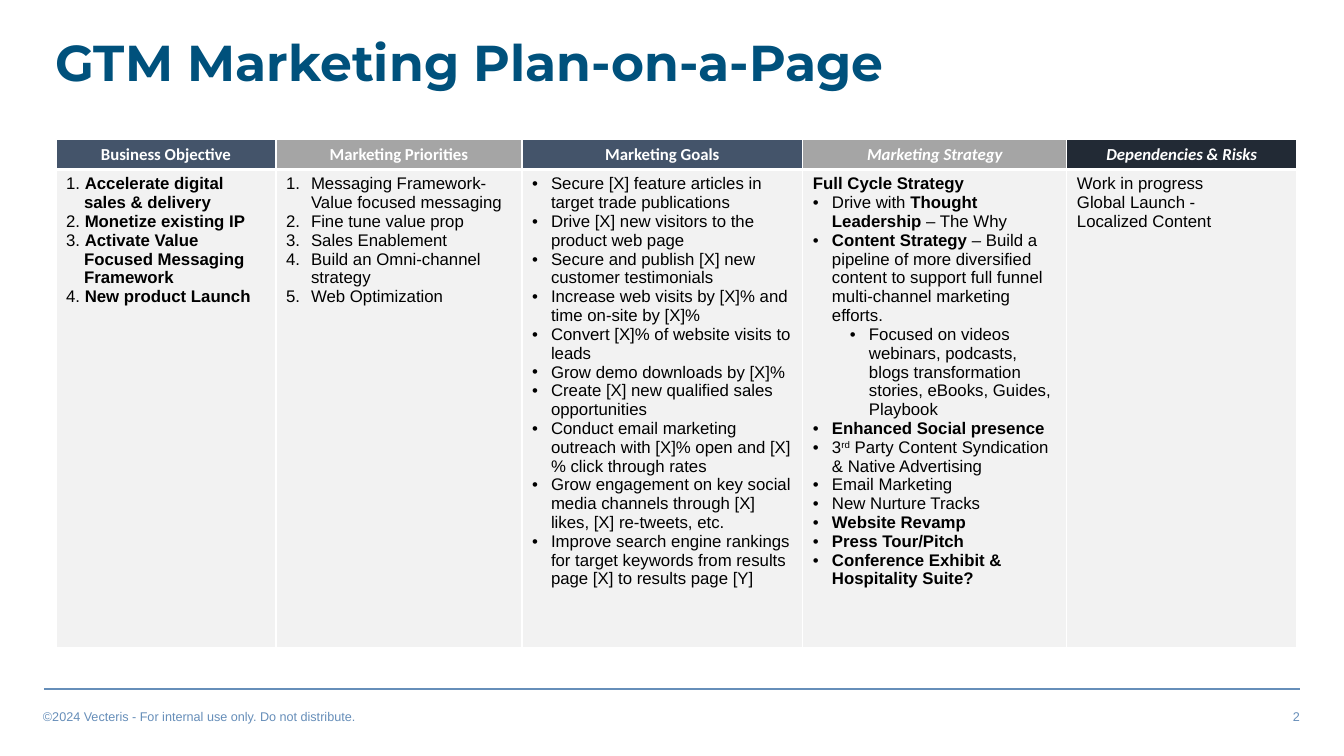
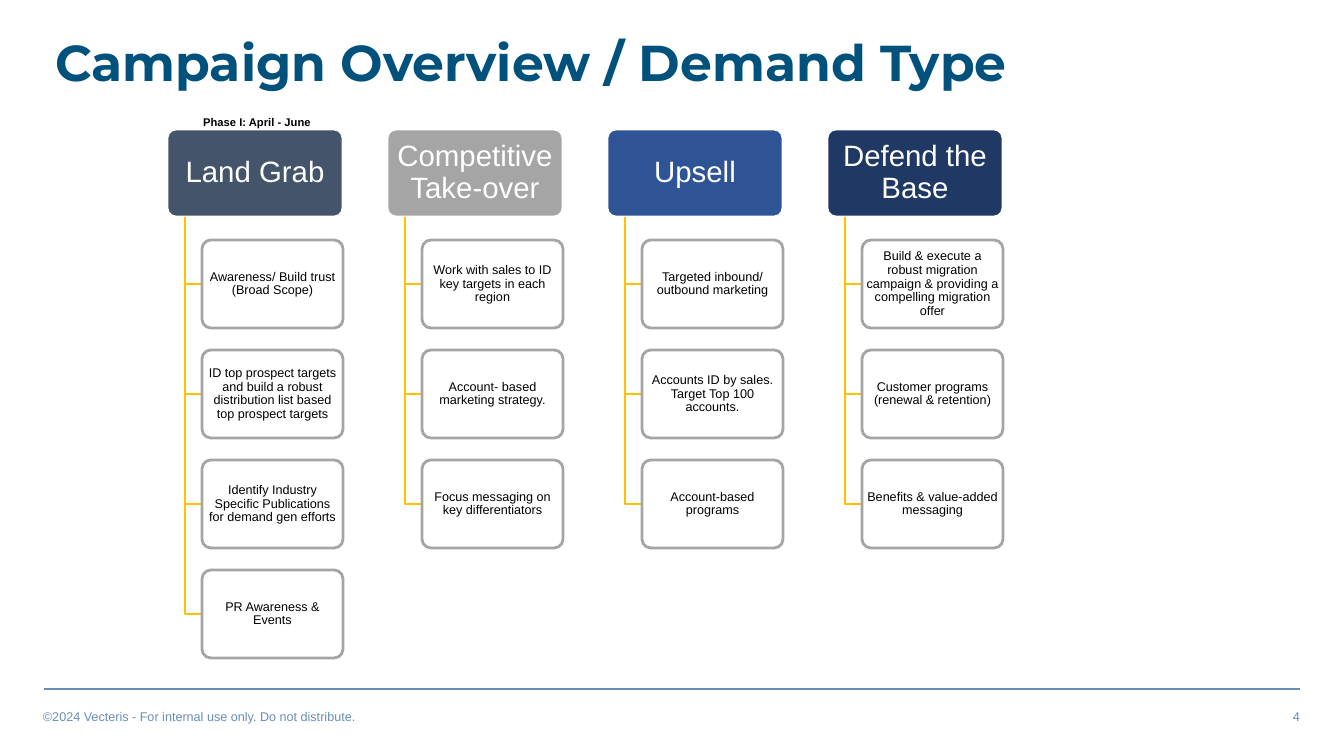
from dataclasses import dataclass

from lxml.etree import SubElement
from pptx import Presentation
from pptx.dml.color import RGBColor
from pptx.enum.shapes import MSO_CONNECTOR, MSO_SHAPE
from pptx.enum.text import MSO_ANCHOR, MSO_AUTO_SIZE, PP_ALIGN
from pptx.oxml import parse_xml
from pptx.oxml.ns import nsdecls, qn
from pptx.util import Pt

PAGE_WIDTH, PAGE_HEIGHT = 1344, 756
EMU_PER_PX = 12192000 / PAGE_WIDTH


@dataclass(frozen=True)
class Theme:
    title: str = "00517C"
    footer: str = "668EB9"
    slate: str = "44546A"
    gray: str = "A5A5A5"
    ink: str = "222A35"
    blue: str = "2F5496"
    navy: str = "1F3864"
    gold: str = "FFC000"
    panel: str = "F2F2F2"
    white: str = "FFFFFF"
    black: str = "000000"
    title_font: str = "Montserrat"
    header_font: str = "Calibri"
    body_font: str = "Arial"
    title_size: int = 36
    campaign_size: int = 21
    table_size: int = 12
    small_size: int = 9
    phase_size: int = 8


THEME = Theme()
FOOTER = "©2024 Vecteris - For internal use only. Do not distribute."

BOLD = {"bold": True}
SUPERSCRIPT = {"baseline": 30000}
PLAIN = {}
TYPED_NUMBER = {"margin": 18, "hanging": 18}
NUMBER = {"margin": 25, "hanging": 25, "marker": "1."}
BULLET = {"margin": 19, "hanging": 19, "marker": "•"}
SUB_BULLET = {"margin": 56, "hanging": 19, "marker": "•", "level": 1}

OBJECTIVES = [
    "Accelerate digital sales & delivery",
    "Monetize existing IP",
    "Activate Value Focused Messaging Framework",
    "New product Launch",
]
PRIORITIES = [
    "Messaging Framework- Value focused messaging",
    "Fine tune value prop",
    "Sales Enablement",
    "Build an Omni-channel strategy",
    "Web Optimization",
]
GOALS = [
    "Secure [X] feature articles in target trade publications",
    "Drive [X] new visitors to the product web page",
    "Secure and publish [X] new customer testimonials",
    "Increase web visits by [X]% and time on-site by [X]%",
    "Convert [X]% of website visits to leads",
    "Grow demo downloads by [X]%",
    "Create [X] new qualified sales opportunities",
    "Conduct email marketing outreach with [X]% open and [X]% click through rates",
    "Grow engagement on key social media channels through [X] likes, [X] re-tweets, etc.",
    "Improve search engine rankings for target keywords from results page [X] to results page [Y]",
]
STRATEGY = [
    ([("Full Cycle Strategy", BOLD)], PLAIN),
    ([("Drive with ", PLAIN), ("Thought Leadership", BOLD), (" – The Why", PLAIN)], BULLET),
    ([("Content Strategy ", BOLD),
      ("– Build a pipeline of more diversified content to support full funnel "
       "multi-channel marketing efforts.", PLAIN)], BULLET),
    ("Focused on videos webinars, podcasts, blogs transformation stories, "
     "eBooks, Guides, Playbook", SUB_BULLET),
    ([("Enhanced Social presence", BOLD)], BULLET),
    ([("3", PLAIN), ("rd", SUPERSCRIPT),
      (" Party Content Syndication & Native Advertising", PLAIN)], BULLET),
    ("Email Marketing", BULLET),
    ("New Nurture Tracks", BULLET),
    ([("Website Revamp", BOLD)], BULLET),
    ([("Press Tour/Pitch", BOLD)], BULLET),
    ([("Conference Exhibit & Hospitality Suite?", BOLD)], BULLET),
]
RISKS = ["Work in progress", "Global Launch -", "Localized Content"]

# heading, width, heading fill, italic heading, entries as (text, paragraph format)
PLAN = [
    ("Business Objective", 220, THEME.slate, False,
     [([(f"{number}. ", PLAIN), (text, BOLD)], TYPED_NUMBER)
      for number, text in enumerate(OBJECTIVES, 1)]),
    ("Marketing Priorities", 246, THEME.gray, False, [(text, NUMBER) for text in PRIORITIES]),
    ("Marketing Goals", 281, THEME.slate, False, [(text, BULLET) for text in GOALS]),
    ("Marketing Strategy", 264, THEME.gray, True, STRATEGY),
    ("Dependencies & Risks", 230, THEME.ink, True, [(text, PLAIN) for text in RISKS]),
]
PLAN_LEFT, PLAN_TOP = 56, 139
PLAN_ROWS = (30, 478)

PHASE = "Phase I: April - June"
CAMPAIGNS = [
    ("Land Grab", THEME.slate, [
        "Awareness/ Build trust (Broad Scope)",
        "ID top prospect targets and build a robust distribution list based top prospect targets",
        "Identify Industry Specific Publications for demand gen efforts",
        "PR Awareness & Events",
    ]),
    ("Competitive Take-over", THEME.gray, [
        "Work with sales to ID key targets in each region",
        "Account- based marketing strategy.",
        "Focus messaging on key differentiators",
    ]),
    ("Upsell", THEME.blue, [
        "Targeted inbound/\noutbound marketing",
        "Accounts ID by sales. Target Top 100 accounts.",
        "Account-based programs",
    ]),
    ("Defend the Base", THEME.navy, [
        "Build & execute a robust migration campaign & providing a compelling migration offer",
        "Customer programs (renewal & retention)",
        "Benefits & value-added messaging",
    ]),
]
CAMPAIGN_LEFT, CAMPAIGN_TOP, CAMPAIGN_PITCH = 167, 129, 220
CAMPAIGN_WIDTH, BOX_HEIGHT = 176, 88
TACTIC_INDENT, TACTIC_TOP, TACTIC_PITCH, TACTIC_WIDTH = 35, 240, 110, 141
TRUNK_INDENT, TRUNK_TOP = 18, 217


def px(length):
    return round(length * EMU_PER_PX)


def rgb(color):
    return RGBColor.from_string(color)


def add_span(para, text, size, color, font, bold=False, italic=False, baseline=None):
    for index, line in enumerate(text.split("\n")):
        if index:
            para.add_line_break()
        span = para.add_run()
        span.text = line
        span.font.size, span.font.name = Pt(size), font
        span.font.bold, span.font.italic = bold, italic
        span.font.color.rgb = rgb(color)
        if baseline:
            span.font._element.set("baseline", str(baseline))


def set_indent(para, margin, hanging, marker, level):
    properties = para._p.get_or_add_pPr()
    properties.set("marL", str(px(margin)))
    properties.set("indent", str(-px(hanging)))
    para.level = level
    if marker:
        color = SubElement(properties, qn("a:buClr"))
        SubElement(color, qn("a:srgbClr"), val=THEME.black)
        SubElement(properties, qn("a:buFont"), typeface=THEME.body_font)
        if marker == "1.":
            SubElement(properties, qn("a:buAutoNum"), type="arabicPeriod")
        else:
            SubElement(properties, qn("a:buChar"), char=marker)


def write(para, text, size=THEME.small_size, color=THEME.black, font=THEME.body_font,
          bold=False, italic=False, align=PP_ALIGN.LEFT, spacing=None,
          margin=0, hanging=0, marker=None, level=0):
    """Fill a paragraph; text is a string or a list of (text, span format)."""
    para.alignment = align
    if spacing:
        para.line_spacing = spacing
    set_indent(para, margin, hanging, marker, level)
    spans = [(text, PLAIN)] if isinstance(text, str) else text
    for words, style in spans:
        add_span(para, words, **{"size": size, "color": color, "font": font,
                                 "bold": bold, "italic": italic, **style})


def set_frame(frame, anchor=MSO_ANCHOR.MIDDLE, inset=(10, 5)):
    frame.word_wrap = True
    frame.auto_size = MSO_AUTO_SIZE.NONE
    frame.vertical_anchor = anchor
    frame.margin_left = frame.margin_right = px(inset[0])
    frame.margin_top = frame.margin_bottom = px(inset[1])


def add_label(page, text, left, top, width, height, **style):
    box = page.shapes.add_textbox(px(left), px(top), px(width), px(height))
    set_frame(box.text_frame)
    write(box.text_frame.paragraphs[0], text, **style)


def add_page(deck, title, title_width, number):
    """Add a page with the shared title style, footer rule and footer texts."""
    page = deck.slides.add_slide(deck.slide_layouts[5])
    heading = page.shapes.title
    heading.left, heading.top = px(45), px(33)
    heading.width, heading.height = px(title_width), px(77)
    set_frame(heading.text_frame, anchor=MSO_ANCHOR.TOP)
    write(heading.text_frame.paragraphs[0], title, size=THEME.title_size, color=THEME.title,
          font=THEME.title_font, bold=True, spacing=0.9)

    rule = page.shapes.add_connector(MSO_CONNECTOR.STRAIGHT, px(44), px(689), px(1300), px(689))
    rule.line.color.rgb, rule.line.width = rgb(THEME.footer), Pt(1)
    SubElement(rule._element.spPr, qn("a:effectLst"))
    add_label(page, FOOTER, 33, 704, 537, 25, color=THEME.footer)
    add_label(page, str(number), 773, 704, 537, 25, color=THEME.footer, align=PP_ALIGN.RIGHT)
    return page


def style_cell(cell, fill, top, bottom):
    """Set the fill and white borders; top and bottom are widths in points."""
    cell.fill.solid()
    cell.fill.fore_color.rgb = rgb(fill)
    properties = cell._tc.get_or_add_tcPr()
    borders = (("lnL", 1), ("lnR", 1), ("lnT", top), ("lnB", bottom))
    for index, (side, width) in enumerate(borders):
        properties.insert(index, parse_xml(
            f'<a:{side} {nsdecls("a")} w="{Pt(width)}"><a:solidFill>'
            f'<a:srgbClr val="{THEME.white}"/></a:solidFill></a:{side}>'))


def add_plan(page):
    total_width = sum(width for _, width, *_ in PLAN)
    table = page.shapes.add_table(len(PLAN_ROWS), len(PLAN), px(PLAN_LEFT), px(PLAN_TOP),
                                  px(total_width), px(sum(PLAN_ROWS))).table
    table.horz_banding = False
    for row, height in zip(table.rows, PLAN_ROWS):
        row.height = px(height)
    for column, (heading, width, fill, italic, entries) in enumerate(PLAN):
        table.columns[column].width = px(width)
        head, body = table.cell(0, column), table.cell(1, column)
        style_cell(head, fill, top=1, bottom=3)
        style_cell(body, THEME.panel, top=3, bottom=1)
        write(head.text_frame.paragraphs[0], heading, size=THEME.table_size, color=THEME.white,
              font=THEME.header_font, bold=True, italic=italic, align=PP_ALIGN.CENTER)
        frame = body.text_frame
        for index, (text, style) in enumerate(entries):
            para = frame.add_paragraph() if index else frame.paragraphs[0]
            write(para, text, size=THEME.table_size, **style)


def add_card(page, text, left, top, width, fill, line, inset, **style):
    card = page.shapes.add_shape(MSO_SHAPE.ROUNDED_RECTANGLE, px(left), px(top),
                                 px(width), px(BOX_HEIGHT))
    card.adjustments[0] = 0.1
    card.shadow.inherit = False
    card.fill.solid()
    card.fill.fore_color.rgb = rgb(fill)
    card.line.color.rgb, card.line.width = rgb(line), Pt(2)
    set_frame(card.text_frame, inset=inset)
    write(card.text_frame.paragraphs[0], text, align=PP_ALIGN.CENTER, spacing=0.9, **style)


def add_branch(page, trunk_x, tactic_x, middle_y):
    builder = page.shapes.build_freeform(px(trunk_x), px(TRUNK_TOP))
    builder.add_line_segments([(px(trunk_x), px(middle_y)), (px(tactic_x), px(middle_y))],
                              close=False)
    branch = builder.convert_to_shape()
    branch.shadow.inherit = False
    branch.fill.background()
    branch.line.color.rgb, branch.line.width = rgb(THEME.gold), Pt(2)


def add_campaigns(page):
    for column, (name, fill, tactics) in enumerate(CAMPAIGNS):
        left = CAMPAIGN_LEFT + column * CAMPAIGN_PITCH
        tactic_left = left + TACTIC_INDENT
        add_card(page, name, left, CAMPAIGN_TOP, CAMPAIGN_WIDTH, fill, THEME.white, (4, 3),
                 size=THEME.campaign_size, color=THEME.white)
        for row, tactic in enumerate(tactics):
            top = TACTIC_TOP + row * TACTIC_PITCH
            add_branch(page, left + TRUNK_INDENT, tactic_left, top + BOX_HEIGHT / 2)
            add_card(page, tactic, tactic_left, top, TACTIC_WIDTH, THEME.white, THEME.gray, (2, 1))
    add_label(page, PHASE, 173, 110, 168, 24, size=THEME.phase_size, bold=True,
              align=PP_ALIGN.CENTER)


def main():
    deck = Presentation()
    deck.slide_width, deck.slide_height = px(PAGE_WIDTH), px(PAGE_HEIGHT)
    add_plan(add_page(deck, "GTM Marketing Plan-on-a-Page", 859, 2))
    add_campaigns(add_page(deck, "Campaign Overview / Demand Type", 1024, 4))
    deck.save("out.pptx")


if __name__ == "__main__":
    main()
